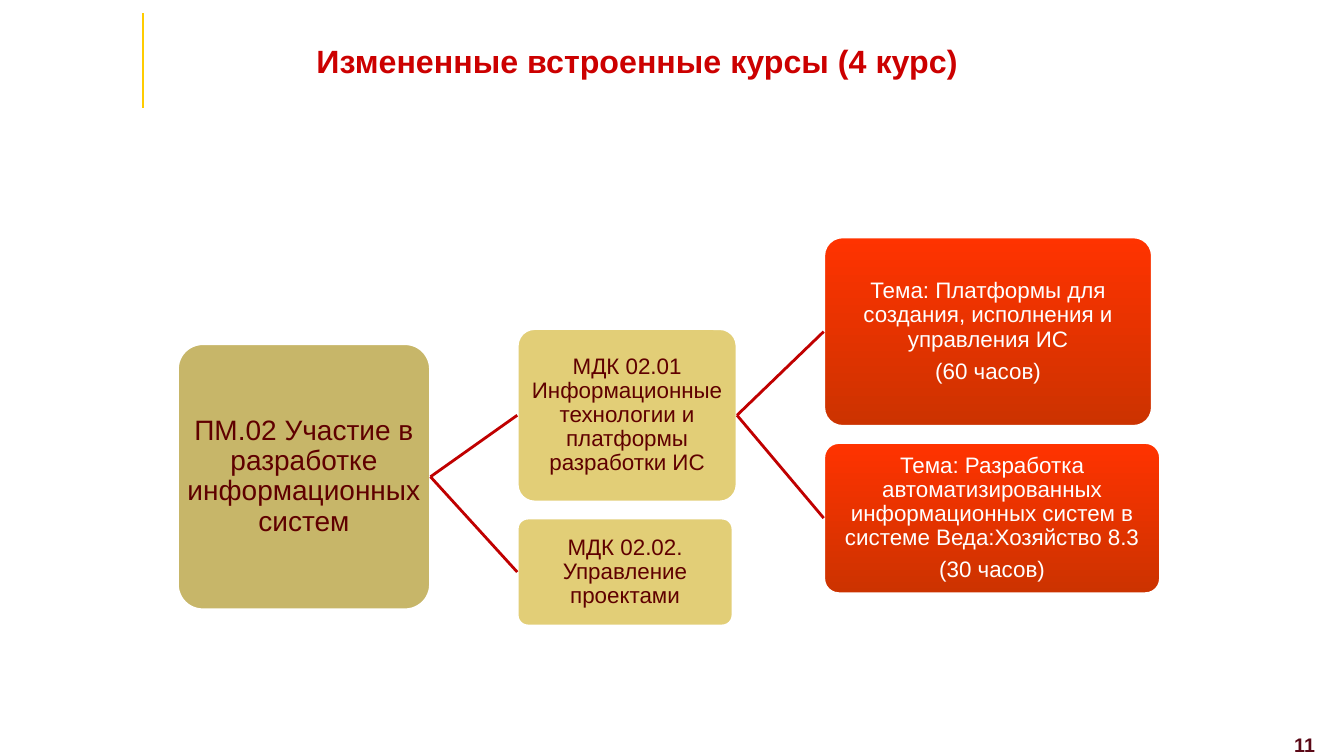
import pptx
import pptx.dml.color
import pptx.enum.shapes
import pptx.enum.text
import pptx.oxml.ns
import pptx.util
from lxml import etree

Inches = pptx.util.Inches
Align = pptx.enum.text.PP_ALIGN
Anchor = pptx.enum.text.MSO_ANCHOR


class Theme:
    font = "Arial"
    title, number = "CC0000", "5B0917"
    accent, link, white = "FFCC00", "C00000", "FFFFFF"
    dark_text = "5F0000"
    module, course = "C7B669", "E2CE77"
    topic = ("FF3300", "CC3300")
    title_size, root_size, node_size, number_size = 23, 20, 16, 14


class SlideBuilder:
    LEFT_SITE, RIGHT_SITE = 1, 3

    def __init__(self, slide, theme):
        self.slide = slide
        self.theme = theme

    def color(self, value):
        return pptx.dml.color.RGBColor.from_string(value)

    def fill_text(self, frame, paragraphs, size, color, align, bold=False, spacing=1.0):
        frame.word_wrap = True
        for index, text in enumerate(paragraphs):
            paragraph = frame.paragraphs[0] if index == 0 else frame.add_paragraph()
            paragraph.text = text
            paragraph.alignment = align
            paragraph.line_spacing = spacing
            if index:
                paragraph.space_before = pptx.util.Pt(round(size * 0.35, 1))
            font = paragraph.font
            font.name = self.theme.font
            font.size = pptx.util.Pt(size)
            font.bold = bold
            font.color.rgb = self.color(color)

    def text(self, box, text, size, color, align, anchor, spacing=1.0):
        frame = self.slide.shapes.add_textbox(*map(Inches, box)).text_frame
        frame.vertical_anchor = anchor
        self.fill_text(frame, [text], size, color, align, True, spacing)

    def node(self, box, paragraphs, fill, color, size):
        shape = self.slide.shapes.add_shape(
            pptx.enum.shapes.MSO_SHAPE.ROUNDED_RECTANGLE, *map(Inches, box))
        shape.shadow.inherit = False
        shape.adjustments[0] = 0.1
        if isinstance(fill, tuple):
            shape.fill.gradient()
            shape.fill.gradient_angle = 270
            for stop, value, position in zip(shape.fill.gradient_stops, fill, (0, 1)):
                stop.color.rgb = self.color(value)
                stop.position = position
        else:
            shape.fill.solid()
            shape.fill.fore_color.rgb = self.color(fill)
        shape.line.color.rgb = self.color(self.theme.white)
        shape.line.width = pptx.util.Pt(2)
        frame = shape.text_frame
        frame.margin_left = frame.margin_right = Inches(0.01)
        frame.margin_top = frame.margin_bottom = Inches(0.01)
        frame.vertical_anchor = Anchor.MIDDLE
        self.fill_text(frame, paragraphs, size, color, Align.CENTER, spacing=0.9)
        return shape

    def line(self, start, end, color, width):
        connector = self.slide.shapes.add_connector(
            pptx.enum.shapes.MSO_CONNECTOR.STRAIGHT, *map(Inches, start + end))
        connector.line.color.rgb = self.color(color)
        connector.line.width = pptx.util.Pt(width)
        etree.SubElement(connector._element.spPr, pptx.oxml.ns.qn("a:effectLst"))
        return connector

    def link(self, parent, child):
        connector = self.line((0, 0), (1, 1), self.theme.link, 2)
        connector.begin_connect(parent, self.RIGHT_SITE)
        connector.end_connect(child, self.LEFT_SITE)


def main():
    presentation = pptx.Presentation()
    presentation.slide_width = Inches(13.33)
    presentation.slide_height = Inches(7.5)
    theme = Theme()
    builder = SlideBuilder(
        presentation.slides.add_slide(presentation.slide_layouts[6]), theme)

    # Heading, accent line and slide number
    builder.line((1.42, 0.13), (1.42, 1.07), theme.accent, 1)
    builder.text((3.04, 0.05, 6.69, 1.18), "Измененные встроенные курсы (4 курс)",
                 theme.title_size, theme.title, Align.LEFT, Anchor.MIDDLE, 0.8)
    builder.text((12.02, 7.22, 1.12, 0.28), "11",
                 theme.number_size, theme.number, Align.RIGHT, Anchor.TOP)

    # Module
    module = builder.node(
        (1.76, 3.41, 2.51, 2.64), ["ПМ.02 Участие в разработке информационных систем"],
        theme.module, theme.dark_text, theme.root_size)

    # Courses of the module
    course_left = 5.13
    platforms, projects = [
        builder.node((course_left, *box), [text], theme.course,
                     theme.dark_text, theme.node_size)
        for box, text in (
            ((3.26, 2.18, 1.72),
             "МДК 02.01 Информационные технологии и платформы разработки ИС"),
            ((5.14, 2.14, 1.07), "МДК 02.02. Управление проектами"),
        )
    ]

    # Topics of the first course
    topic_left = 8.17
    topics = [
        builder.node((topic_left, *box), paragraphs, theme.topic,
                     theme.white, theme.node_size)
        for box, paragraphs in (
            ((2.35, 3.26, 1.88),
             ["Тема: Платформы для создания, исполнения и управления ИС", "(60 часов)"]),
            ((4.39, 3.34, 1.5),
             ["Тема: Разработка автоматизированных информационных систем в системе "
              "Веда:Хозяйство 8.3", "(30 часов)"]),
        )
    ]

    # Links between the levels
    for parent, children in ((module, (platforms, projects)), (platforms, topics)):
        for child in children:
            builder.link(parent, child)

    presentation.save("out.pptx")


if __name__ == "__main__":
    main()
